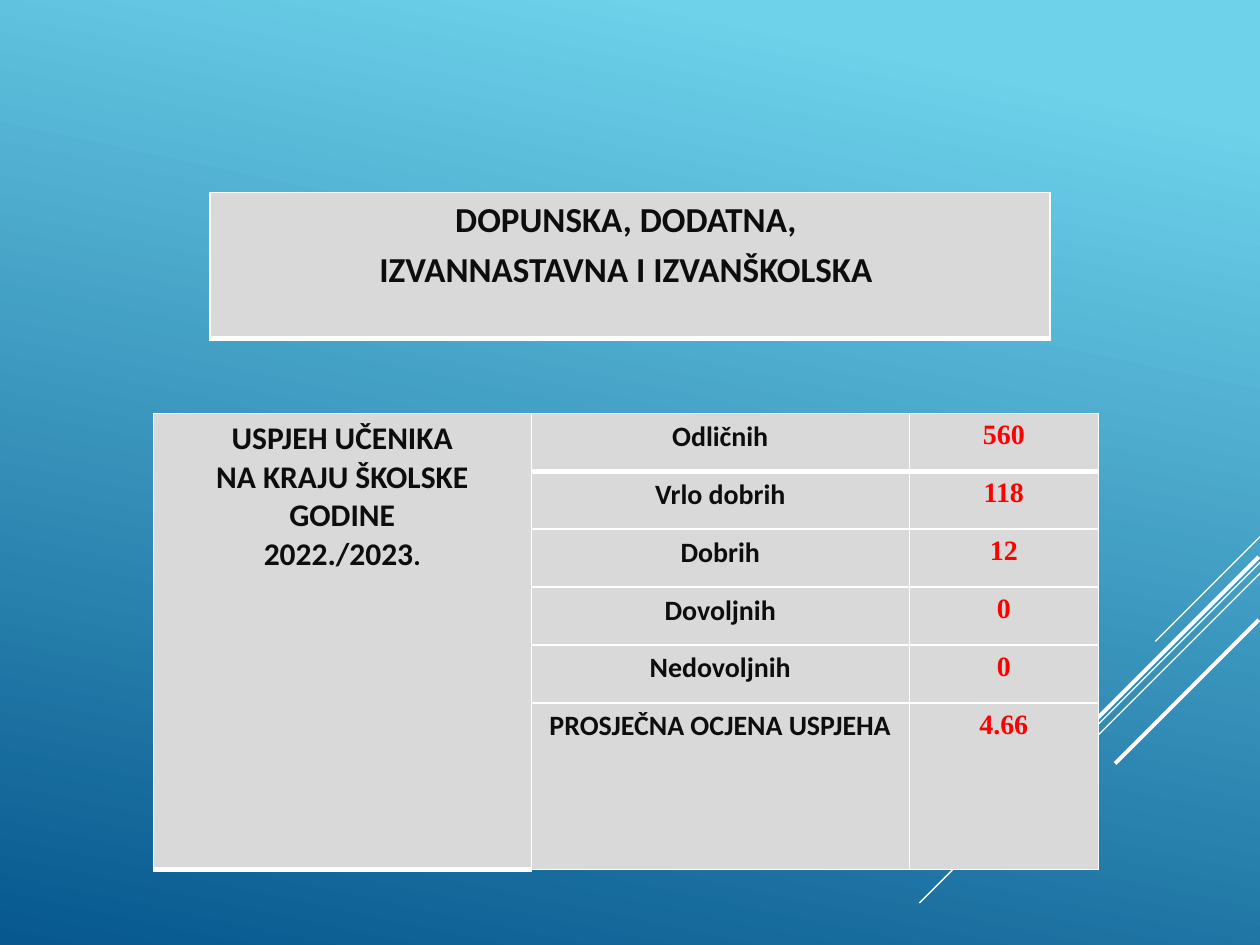
import pptx
import pptx.dml.color
import pptx.enum.text
import pptx.oxml
import pptx.oxml.ns
import pptx.util

Pt = pptx.util.Pt
INK, RED, WHITE, PANEL = "0D0D0D", "FF0000", "FFFFFF", "D9D9D9"
THIN, THICK = 0.96, 3


def color(hex_value):
    return pptx.dml.color.RGBColor.from_string(hex_value)


def apply(target, values):
    for name, value in values.items():
        setattr(target, name, value)


class SlideBuilder:
    label = {"name": "Calibri", "size": Pt(16), "bold": True}
    value = {**label, "name": "Times New Roman"}
    term = {**label, "size": Pt(18)}
    heading = {**label, "size": Pt(20)}

    def __init__(self, slide):
        self.slide = slide

    def background(self, stops, angle):
        fill = self.slide.background.fill
        fill.gradient()
        fill.gradient_angle = 360 - angle
        for stop, (position, shade) in zip(fill.gradient_stops, stops):
            stop.position = position
            stop.color.rgb = color(shade)

    def line(self, x1, y1, x2, y2, weight):
        stripe = self.slide.shapes.add_connector(1, Pt(x1), Pt(y1), Pt(x2), Pt(y2))
        stripe.line.color.rgb = color(WHITE)
        stripe.line.width = Pt(weight)
        stripe._element.spPr.append(pptx.oxml.parse_xml(
            f'<a:effectLst {pptx.oxml.ns.nsdecls("a")}/>'))

    def table(self, left, top, columns, rows):
        table = self.slide.shapes.add_table(
            len(rows), len(columns), Pt(left), Pt(top),
            Pt(sum(columns)), Pt(sum(rows))).table
        apply(table, {"first_row": False, "horz_banding": False})
        for column, width in zip(table.columns, columns):
            column.width = Pt(width)
        for row, height in zip(table.rows, rows):
            row.height = Pt(height)
        return table

    def cell(self, cell, top=THIN, bottom=THIN, margin=5):
        properties = cell._tc.get_or_add_tcPr()
        for side, weight in {"L": THIN, "R": THIN, "T": top, "B": bottom}.items():
            properties.append(pptx.oxml.parse_xml(
                f'<a:ln{side} {pptx.oxml.ns.nsdecls("a")} w="{Pt(weight)}">'
                f'<a:solidFill><a:srgbClr val="{WHITE}"/></a:solidFill></a:ln{side}>'))
        cell.fill.solid()
        cell.fill.fore_color.rgb = color(PANEL)
        apply(cell, {"margin_left": Pt(margin), "margin_right": Pt(margin),
                     "margin_top": Pt(3.6), "margin_bottom": Pt(3.6)})

    def text(self, cell, lines, font, shade=INK, before=0):
        frame = cell.text_frame
        for index, line in enumerate(lines):
            paragraph = frame.add_paragraph() if index else frame.paragraphs[0]
            apply(paragraph, {"alignment": pptx.enum.text.PP_ALIGN.CENTER,
                              "space_before": Pt(before)})
            self.run(paragraph, line, font, shade)
        return paragraph

    def run(self, paragraph, words, font, shade=INK):
        run = paragraph.add_run()
        run.text = words
        apply(run.font, font)
        run.font.color.rgb = color(shade)


def main():
    deck = pptx.Presentation()
    apply(deck, {"slide_width": Pt(720), "slide_height": Pt(540)})
    page = SlideBuilder(deck.slides.add_slide(deck.slide_layouts[6]))
    page.background([(0.1, "6ED2EB"), (1, "06588E")], 102)

    # Diagonal stripes, all at 45 degrees: right end, top, run, weight
    for right, top, run, weight in [
            (720, 306.7, 59.8, 0.75), (720, 321.4, 194.6, 0.75),
            (720, 327.6, 123.8, 0.75), (719.3, 318.2, 113, 2.25),
            (719.3, 354.2, 82.1, 2.25)]:
        page.line(right, top, right - run, top + run, weight)

    # Student results
    grades = [("Odličnih", "560"), ("Vrlo dobrih", "118"), ("Dobrih", "12"),
              ("Dovoljnih", "0"), ("Nedovoljnih", "0"),
              ("PROSJEČNA OCJENA USPJEHA", "4.66")]
    results = page.table(87.6, 236.2, [216, 216, 108], [33.1] * len(grades))
    for row, (grade, count) in enumerate(grades):
        page.cell(results.cell(row, 0), bottom=THICK)
        for column, words, font, shade in [(1, grade, page.label, INK),
                                           (2, count, page.value, RED)]:
            cell = results.cell(row, column)
            page.cell(cell, top=THICK if row == 1 else THIN,
                      bottom=THICK if row == 0 else THIN)
            page.text(cell, [words], font, shade)
    school_year = results.cell(0, 0)
    school_year.merge(results.cell(len(grades) - 1, 0))
    year_line = page.text(
        school_year, ["USPJEH UČENIKA", "NA KRAJU ŠKOLSKE GODINE", "2022./2023"],
        page.term)
    page.run(year_line, ".", page.label)

    # Heading panel
    activities = page.table(120, 110, [480], [83.4]).cell(0, 0)
    page.cell(activities, bottom=THICK, margin=7.2)
    page.text(activities, ["DOPUNSKA, DODATNA, ", "IZVANNASTAVNA I IZVANŠKOLSKA "],
              page.heading, before=4)

    deck.save("out.pptx")


if __name__ == "__main__":
    main()
